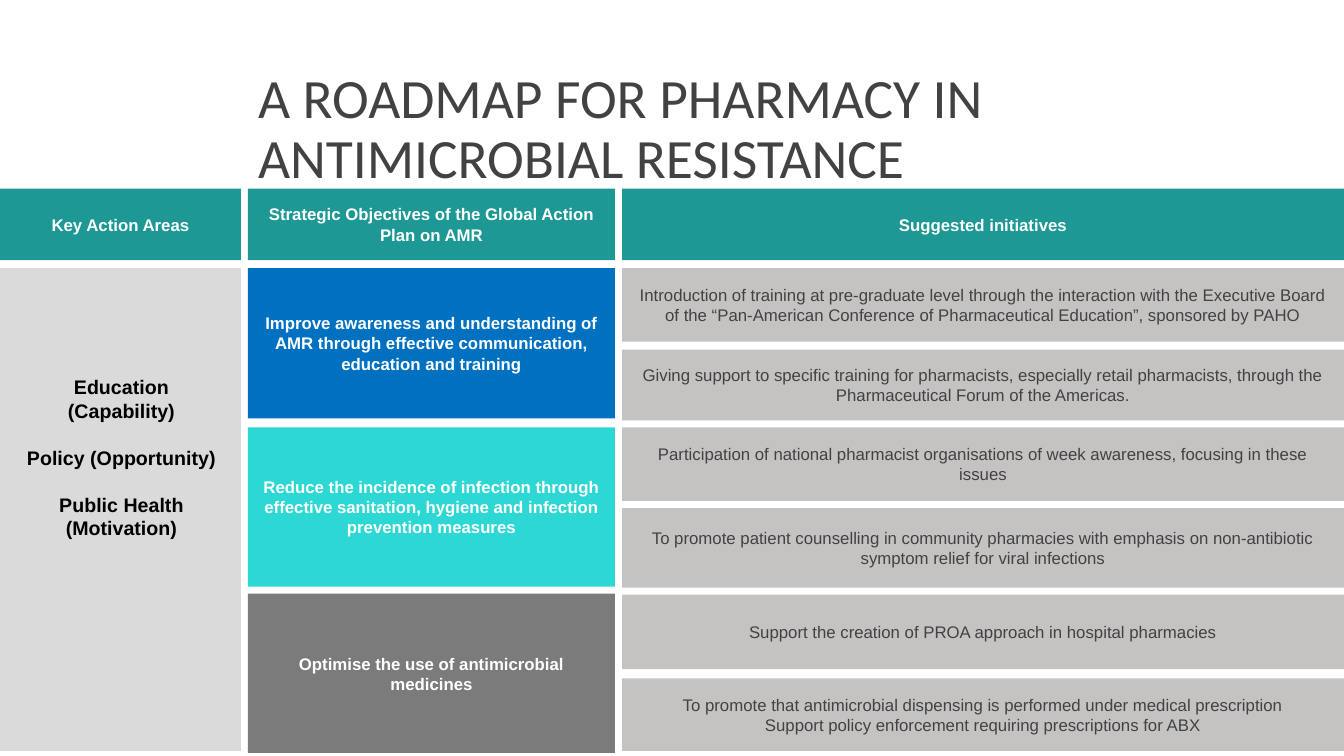
from pptx import Presentation
from pptx.dml.color import RGBColor
from pptx.enum.shapes import MSO_SHAPE
from pptx.enum.text import MSO_ANCHOR, PP_ALIGN
from pptx.util import Inches, Pt

RECT = MSO_SHAPE.RECTANGLE
TOP, MIDDLE = MSO_ANCHOR.TOP, MSO_ANCHOR.MIDDLE
LEFT, CENTER = PP_ALIGN.LEFT, PP_ALIGN.CENTER

# Content
TITLE = "A ROADMAP FOR PHARMACY IN ANTIMICROBIAL RESISTANCE"
HEADERS = ["Key Action Areas",
           "Strategic Objectives of the Global Action Plan on AMR",
           "Suggested initiatives"]
AREAS = ["Education (Capability)", "Policy (Opportunity)", "Public Health (Motivation)"]
OBJECTIVES = [
    ("Improve awareness and understanding of AMR through effective communication, "
     "education and training", "0070C0"),
    ("Reduce the incidence of infection through effective sanitation, hygiene and "
     "infection prevention measures", "2DD7D3"),
    ("Optimise the use of antimicrobial medicines", "7B7B7B"),
]
INITIATIVES = [
    ["Introduction of training at pre-graduate level through the interaction with the "
     "Executive Board of the “Pan-American Conference of Pharmaceutical Education”, "
     "sponsored by PAHO"],
    ["Giving support to specific training for pharmacists, especially retail "
     "pharmacists, through the Pharmaceutical Forum of the Americas."],
    ["Participation of national pharmacist organisations of week awareness, focusing "
     "in these issues"],
    ["To promote patient counselling in community pharmacies with emphasis on "
     "non-antibiotic symptom relief for viral infections"],
    ["Support the creation of PROA approach in hospital pharmacies"],
    ["To promote that antimicrobial dispensing is performed under medical prescription",
     "Support policy enforcement requiring prescriptions for ABX"],
]

# Grid in inches: (left, width) of columns, (top, height) of rows
COLUMNS = [(0, 2.39), (2.46, 3.64), (6.17, 7.16)]
HEADER_ROW = (1.87, 0.71)
AREA_ROW = (2.66, 4.79)
OBJECTIVE_ROWS = [(2.66, 1.49), (4.24, 1.58), (5.89, 1.58)]
INITIATIVE_ROWS = [(2.66, 0.73), (3.47, 0.7), (4.24, 0.73),
                   (5.04, 0.79), (5.9, 0.74), (6.73, 0.72)]
TEAL, PALE, GREY, DARK, WHITE, BLACK = (
    "1D9895", "DBDADA", "C5C2C2", "424242", "FFFFFF", "000000")


def rgb(value):
    return RGBColor.from_string(value)


def write(sp, lines, size, color, bold=False, font="Arial", align=CENTER,
          anchor=MIDDLE, gap=0, spacing=1.0):
    tf = sp.text_frame
    tf.word_wrap = True
    tf.vertical_anchor = anchor
    for i, line in enumerate(lines):
        p = tf.paragraphs[0] if i == 0 else tf.add_paragraph()
        p.alignment = align
        p.line_spacing = spacing
        p.space_before = Pt(gap if i else 0)
        r = p.add_run()
        r.text = line
        r.font.name, r.font.size, r.font.bold = font, Pt(size), bold
        r.font.color.rgb = rgb(color)


def block(column, row, fill, lines=(), color=WHITE, bold=True):
    (left, width), (top, height) = column, row
    sp = s.shapes.add_shape(RECT, Inches(left), Inches(top), Inches(width), Inches(height))
    sp.shadow.inherit = False
    sp.fill.solid()
    sp.fill.fore_color.rgb = rgb(fill)
    sp.line.fill.background()
    write(sp, lines, 12, color, bold)


prs = Presentation()
prs.slide_width, prs.slide_height = Inches(13.33), Inches(7.5)
s = prs.slides.add_slide(prs.slide_layouts[5])

# Title
title = s.shapes.title
title.left, title.top = Inches(2.46), Inches(0.65)
title.width, title.height = Inches(9.96), Inches(0.98)
write(title, [TITLE], 39.6, DARK, font="Calibri", align=LEFT, anchor=TOP, spacing=0.9)
title.text_frame.auto_size = None

# Header row
for column, header in zip(COLUMNS, HEADERS):
    block(column, HEADER_ROW, TEAL, [header])

# Key action areas
area_col, objective_col, initiative_col = COLUMNS
block(area_col, AREA_ROW, PALE)
areas = s.shapes.add_textbox(Inches(0.09), Inches(3.67), Inches(2.23), Inches(1.99))
write(areas, AREAS, 14, BLACK, bold=True, anchor=TOP, gap=16.8)

# Objectives and initiatives
for row, (objective, fill) in zip(OBJECTIVE_ROWS, OBJECTIVES):
    block(objective_col, row, fill, [objective])
for row, lines in zip(INITIATIVE_ROWS, INITIATIVES):
    block(initiative_col, row, GREY, lines, DARK, bold=False)

prs.save("out.pptx")
